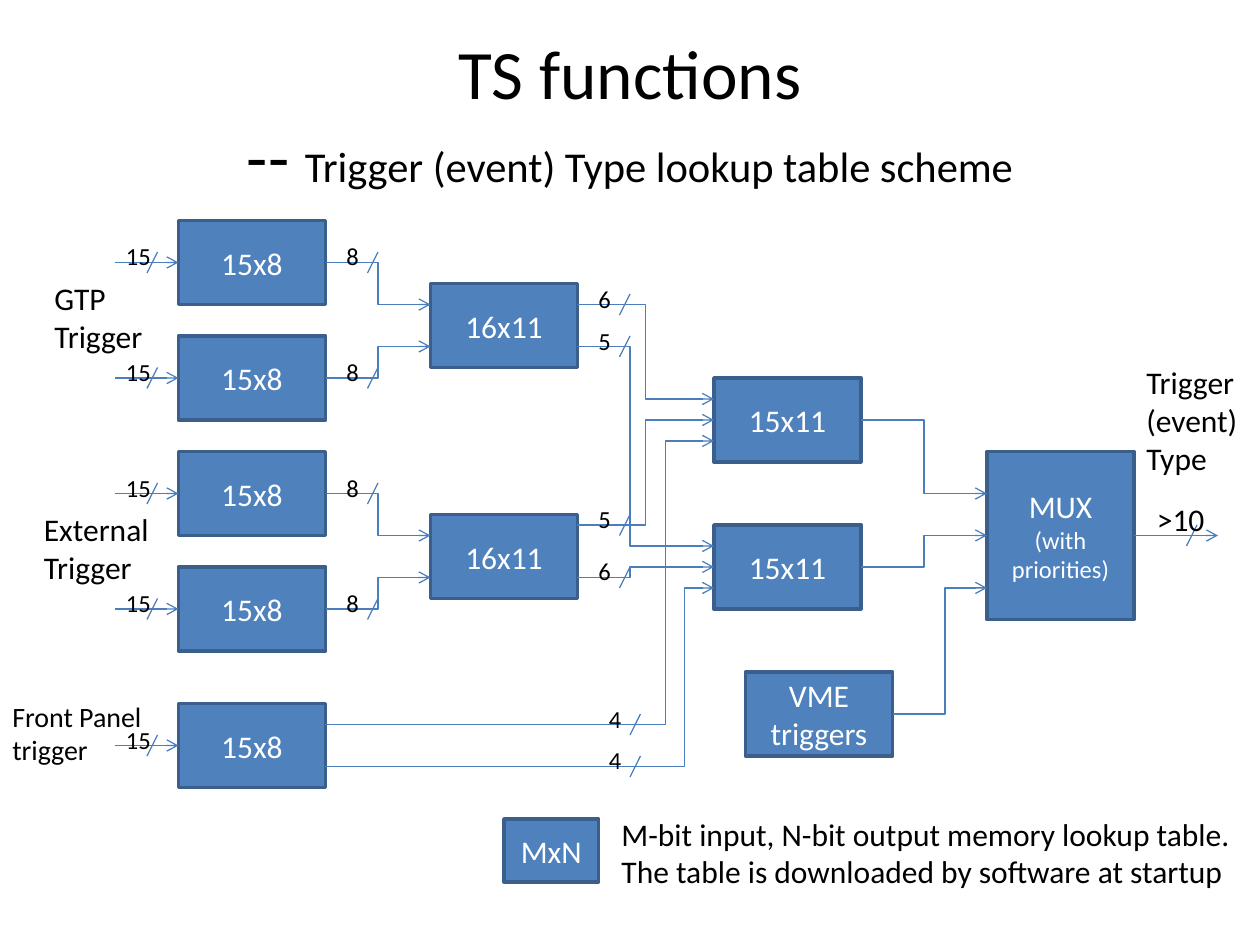
"""Builds the trigger type lookup table scheme slide."""
from dataclasses import dataclass

from lxml import etree
from pptx import Presentation
from pptx.dml.color import RGBColor
from pptx.enum.shapes import MSO_CONNECTOR, MSO_SHAPE
from pptx.enum.text import MSO_ANCHOR, MSO_AUTO_SIZE, PP_ALIGN
from pptx.oxml.ns import qn
from pptx.util import Emu, Pt

RECTANGLE = MSO_SHAPE.RECTANGLE
STRAIGHT, ELBOW = MSO_CONNECTOR.STRAIGHT, MSO_CONNECTOR.ELBOW
MIDDLE, CENTER, LEFT = MSO_ANCHOR.MIDDLE, PP_ALIGN.CENTER, PP_ALIGN.LEFT
GROW = MSO_AUTO_SIZE.SHAPE_TO_FIT_TEXT

EMU_PER_PX = 7620
FONT = "Calibri"
BLACK, WHITE, BLUE, EDGE, WIRE = "000000", "FFFFFF", "4F81BD", "3A5F8C", "4B7EBC"
BLOCK_W, BLOCK_H = 140, 80
INPUT_X, MERGE_X, TABLE_X, MUX_X = 170, 410, 680, 940
INPUT_TOPS = (210, 320, 430, 540, 670)


@dataclass(frozen=True)
class Line:
    """One paragraph of text with its size in points."""
    text: str
    size: float = 18


@dataclass(frozen=True)
class Block:
    """A labelled box of the diagram."""
    x: int
    y: int
    lines: tuple[Line, ...]
    w: int = BLOCK_W
    h: int = BLOCK_H


@dataclass(frozen=True)
class Route:
    """An arrow that turns vertically at one x position."""
    x1: int
    y1: int
    x2: int
    y2: int
    turn: int


@dataclass(frozen=True)
class Caption:
    """Free text beside the diagram."""
    x: int
    y: int
    w: int
    h: int
    lines: tuple[Line, ...]
    wrap: bool = False


@dataclass(frozen=True)
class BitWidth:
    """A bus width with its slash across a wire at height y."""
    x: int
    y: int
    bits: str


BLOCKS = [
    *(Block(INPUT_X, top, (Line("15x8"),)) for top in INPUT_TOPS),
    *(Block(MERGE_X, top, (Line("16x11"),)) for top in (270, 490)),
    *(Block(TABLE_X, top, (Line("15x11"),)) for top in (360, 500)),
    Block(MUX_X, 430, (Line("MUX"), Line("(with priorities)", 14)), h=160),
    Block(710, 640, (Line("VME triggers"),)),
    Block(480, 780, (Line("MxN"),), 90, 60),
]
ROUTES = [
    Route(310, 250, MERGE_X, 290, 360),
    Route(310, 360, MERGE_X, 330, 360),
    Route(310, 470, MERGE_X, 510, 360),
    Route(310, 580, MERGE_X, 550, 360),
    Route(550, 290, TABLE_X, 380, 615),
    Route(550, 500, TABLE_X, 400, 615),
    Route(550, 330, TABLE_X, 520, 600),
    Route(550, 550, TABLE_X, 540, 600),
    Route(310, 690, TABLE_X, 420, 634),
    Route(310, 730, TABLE_X, 560, 652),
    Route(820, 400, MUX_X, 470, 880),
    Route(820, 540, MUX_X, 510, 880),
    Route(850, 680, MUX_X, 560, 900),
]
INPUT_YS = [top + BLOCK_H // 2 for top in INPUT_TOPS]
BIT_WIDTHS = [
    *(BitWidth(120, y, "15") for y in INPUT_YS),
    *(BitWidth(330, y, "8") for y in INPUT_YS[:4]),
    BitWidth(570, 290, "6"),
    BitWidth(570, 330, "5"),
    BitWidth(570, 500, "5"),
    BitWidth(570, 550, "6"),
    BitWidth(580, 690, "4"),
    BitWidth(580, 730, "4"),
]
CAPTIONS = [
    Caption(580, 770, 611, 85, (
        Line("M-bit input, N-bit output memory lookup table."),
        Line("The table is downloaded by software at startup"))),
    Caption(1080, 340, 120, 121, (Line("Trigger"), Line("(event)Type")), True),
    Caption(40, 260, 109, 85, (Line("GTP"), Line("Trigger"))),
    Caption(30, 480, 125, 85, (Line("External"), Line("Trigger"))),
    Caption(0, 660, 149, 77, (Line("Front Panel", 16), Line("trigger", 16))),
    Caption(1090, 470, 70, 48, (Line(">10"),)),
]


def px(*values: int) -> list[Emu]:
    """Turn px lengths into EMU."""
    return [Emu(value * EMU_PER_PX) for value in values]


def color(code: str) -> RGBColor:
    """Turn a hex string into a colour."""
    return RGBColor.from_string(code)


def add_run(paragraph, line: Line, ink: str) -> None:
    """Add one formatted run to a paragraph."""
    run = paragraph.add_run()
    run.text = line.text
    run.font.name, run.font.size = FONT, Pt(line.size)
    run.font.color.rgb = color(ink)


def write(frame, lines: tuple[Line, ...], ink: str, align: PP_ALIGN) -> None:
    """Write each line as a paragraph."""
    for index, line in enumerate(lines):
        paragraph = frame.add_paragraph() if index else frame.paragraphs[0]
        paragraph.alignment = align
        add_run(paragraph, line, ink)


def draw_title(slide) -> None:
    """Draw the two-line title."""
    frame = slide.shapes.add_textbox(*px(60, 36, 1080, 144)).text_frame
    frame.word_wrap, frame.vertical_anchor = True, MIDDLE
    heading = frame.paragraphs[0]
    heading.alignment = CENTER
    add_run(heading, Line("TS functions", 39.6), BLACK)
    heading.add_line_break()
    add_run(heading, Line("-- ", 39.6), BLACK)
    add_run(heading, Line("Trigger (event) Type lookup table scheme", 24.3), BLACK)


def draw_block(slide, block: Block) -> None:
    """Draw a box with centred white text."""
    box = slide.shapes.add_shape(RECTANGLE, *px(block.x, block.y, block.w, block.h))
    box.shadow.inherit = False
    box.fill.solid()
    box.fill.fore_color.rgb = color(BLUE)
    box.line.color.rgb, box.line.width = color(EDGE), Pt(2)
    box.text_frame.word_wrap, box.text_frame.vertical_anchor = True, MIDDLE
    write(box.text_frame, block.lines, WHITE, CENTER)


def draw_wire(slide, x1: int, y1: int, x2: int, y2: int,
              arrow: bool = True, kind: MSO_CONNECTOR = STRAIGHT):
    """Draw a connector, with an open arrowhead if wanted."""
    wire = slide.shapes.add_connector(kind, *px(x1, y1, x2, y2))
    wire.line.color.rgb, wire.line.width = color(WIRE), Pt(0.75)
    if arrow:
        etree.SubElement(wire.line._get_or_add_ln(), qn("a:tailEnd"), type="arrow")
    etree.SubElement(wire._element.spPr, qn("a:effectLst"))
    return wire


def draw_route(slide, route: Route) -> None:
    """Draw an elbow arrow bent at its turn position."""
    wire = draw_wire(slide, route.x1, route.y1, route.x2, route.y2, kind=ELBOW)
    bend = round((route.turn - route.x1) / (route.x2 - route.x1) * 100000)
    guides = wire._element.spPr.find(qn("a:prstGeom")).get_or_add_avLst()
    etree.SubElement(guides, qn("a:gd"), name="adj1", fmla=f"val {bend}")


def draw_caption(slide, caption: Caption, padded: bool = True) -> None:
    """Draw free text that grows with its content."""
    place = px(caption.x, caption.y, caption.w, caption.h)
    frame = slide.shapes.add_textbox(*place).text_frame
    frame.word_wrap, frame.auto_size = caption.wrap, GROW
    if not padded:
        frame.margin_left = frame.margin_right = 0
        frame.margin_top = frame.margin_bottom = 0
    write(frame, caption.lines, BLACK, LEFT)


def draw_bit_width(slide, bus: BitWidth) -> None:
    """Draw a slash across a wire and its bit count."""
    draw_wire(slide, bus.x + 30, bus.y - 10, bus.x + 20, bus.y + 10, arrow=False)
    count = Caption(bus.x, bus.y - 20, 12 * len(bus.bits), 28, (Line(bus.bits, 14),))
    draw_caption(slide, count, padded=False)


def main() -> None:
    """Build and save the slide."""
    deck = Presentation()
    deck.slide_width, deck.slide_height = px(1200, 900)
    slide = deck.slides.add_slide(deck.slide_layouts[6])
    draw_title(slide)
    for block in BLOCKS:
        draw_block(slide, block)
    for y in INPUT_YS:
        draw_wire(slide, 110, y, INPUT_X, y)
    for route in ROUTES:
        draw_route(slide, route)
    draw_wire(slide, 1080, 510, 1160, 510)
    draw_wire(slide, 1130, 520, 1140, 500, arrow=False)
    for bus in BIT_WIDTHS:
        draw_bit_width(slide, bus)
    for caption in CAPTIONS:
        draw_caption(slide, caption)
    deck.save("out.pptx")


if __name__ == "__main__":
    main()
